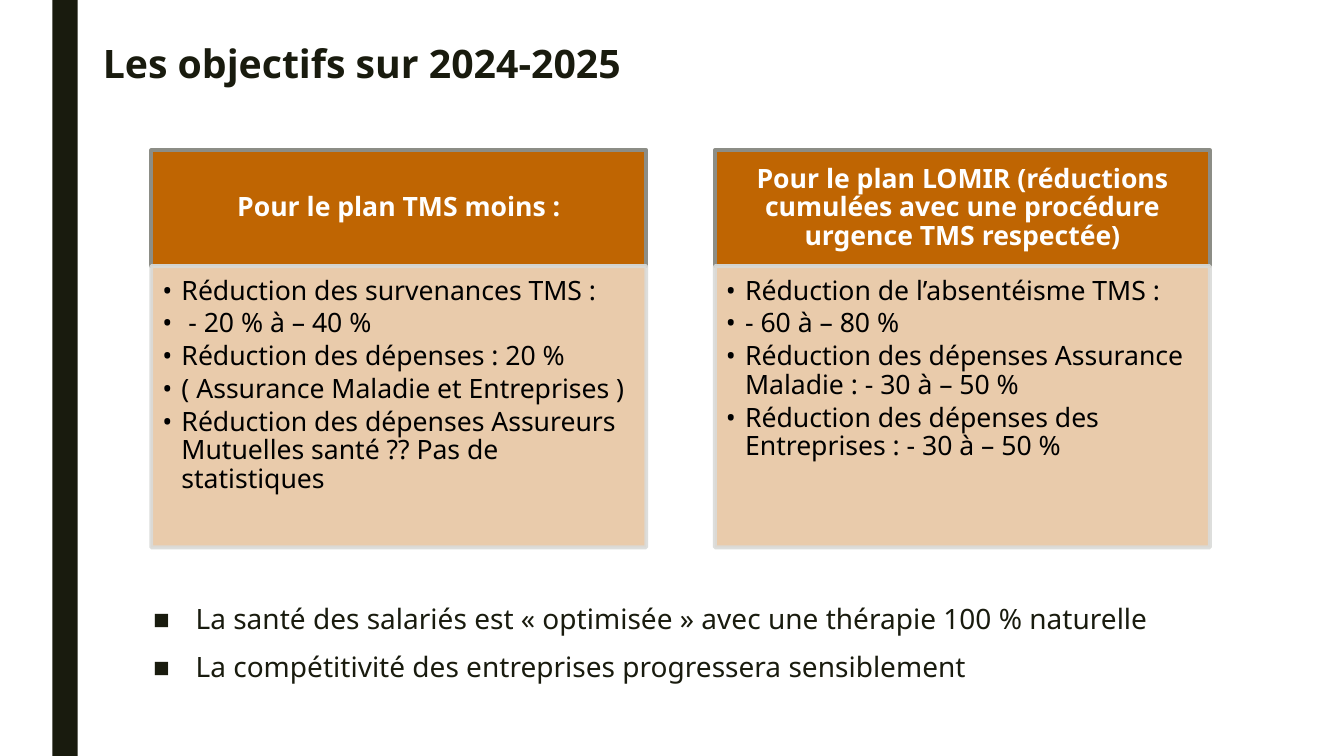
import pptx
import pptx.dml.color
import pptx.enum.shapes
import pptx.enum.text
import pptx.oxml.ns
import pptx.util
from lxml import etree

# Content
TITLE = "Les objectifs sur 2024-2025"
PLANS = [
    ("Pour le plan TMS moins :", [
        "Réduction des survenances TMS :",
        " - 20 % à – 40 %",
        "Réduction des dépenses : 20 %",
        "( Assurance Maladie et Entreprises )",
        "Réduction des dépenses Assureurs Mutuelles santé ?? Pas de statistiques",
    ]),
    ("Pour le plan LOMIR (réductions cumulées avec une procédure urgence TMS respectée)", [
        "Réduction de l’absentéisme TMS :",
        "- 60 à – 80 %",
        "Réduction des dépenses Assurance Maladie : - 30 à – 50 %",
        "Réduction des dépenses des Entreprises : - 30 à – 50 %",
    ]),
]
BENEFITS = [
    "La santé des salariés est « optimisée » avec une thérapie 100 % naturelle",
    "La compétitivité des entreprises progressera sensiblement",
]

# Style
FONT = "Noto Sans"
COLORS = {
    "ink": "191B0E", "header": "BF6502", "header_line": "8C8D86",
    "panel": "E7C6A2", "panel_line": "DADBD9", "white": "FFFFFF", "black": "000000",
}

# Grid, in inches
SLIDE_W, SLIDE_H = 13.33, 7.5
PLAN_LEFT, PLAN_TOP, PLAN_W, PLAN_GAP = 1.5, 1.49, 4.91, 0.68
HEADER_H, PANEL_H = 1.15, 2.79

ALIGN = pptx.enum.text.PP_ALIGN
ANCHOR = pptx.enum.text.MSO_ANCHOR
inches, points, qn = pptx.util.Inches, pptx.util.Pt, pptx.oxml.ns.qn


def rgb(name):
    return pptx.dml.color.RGBColor.from_string(COLORS[name])


def add_box(left, top, width, height, fill, line=None, opacity=100):
    box = slide.shapes.add_shape(
        pptx.enum.shapes.MSO_SHAPE.RECTANGLE, *map(inches, (left, top, width, height)))
    box.shadow.inherit = False
    box.fill.solid()
    box.fill.fore_color.rgb = rgb(fill)
    if line:
        box.line.color.rgb = rgb(line)
        box.line.width = points(2.75)
    else:
        box.line.fill.background()
    if opacity < 100:
        for color in box._element.spPr.iter(qn("a:srgbClr")):
            etree.SubElement(color, qn("a:alpha"), val=str(opacity * 1000))
    return box


def place(placeholder, left, top, width, height):
    placeholder.left, placeholder.top = inches(left), inches(top)
    placeholder.width, placeholder.height = inches(width), inches(height)


def write(shape, lines, size, color, spacing, before=0, after=0, bold=False,
          align=ALIGN.LEFT, anchor=ANCHOR.TOP, insets=(0.1, 0.05, 0.1, 0.05),
          bullet=None, bullet_percent=100, indent=0):
    frame = shape.text_frame
    frame.text = "\n".join(lines)
    frame.word_wrap = True
    frame.auto_size = pptx.enum.text.MSO_AUTO_SIZE.NONE
    frame.vertical_anchor = anchor
    (frame.margin_left, frame.margin_top,
     frame.margin_right, frame.margin_bottom) = map(inches, insets)
    for paragraph in frame.paragraphs:
        if bullet:
            props = paragraph._p.get_or_add_pPr()
            props.set("marL", str(inches(indent)))
            props.set("indent", str(-inches(indent)))
            etree.SubElement(props, qn("a:buSzPct"), val=str(bullet_percent * 1000))
            etree.SubElement(props, qn("a:buFont"), typeface=FONT)
            etree.SubElement(props, qn("a:buChar"), char=bullet)
        paragraph.alignment = align
        paragraph.line_spacing = spacing
        paragraph.space_before, paragraph.space_after = points(before), points(after)
        paragraph.font.name, paragraph.font.size = FONT, points(size)
        paragraph.font.bold = bold
        paragraph.font.color.rgb = rgb(color)


presentation = pptx.Presentation()
presentation.slide_width, presentation.slide_height = inches(SLIDE_W), inches(SLIDE_H)
slide = presentation.slides.add_slide(presentation.slide_layouts[1])

# Side band and title
add_box(0.52, 0, 0.25, SLIDE_H, "ink")
title = slide.shapes.title
place(title, 0.92, 0.4, 11.5, 0.82)
write(title, [TITLE], 28, "ink", 0.89, bold=True)

# One column per plan: header above its goals
for column, (plan, goals) in enumerate(PLANS):
    left = PLAN_LEFT + column * (PLAN_W + PLAN_GAP)
    header = add_box(left, PLAN_TOP, PLAN_W, HEADER_H, "header", "header_line")
    write(header, [plan], 19, "white", 0.9, bold=True, align=ALIGN.CENTER,
          anchor=ANCHOR.MIDDLE, insets=(0.15, 0.08, 0.15, 0.08))
    panel = add_box(left, PLAN_TOP + HEADER_H, PLAN_W, PANEL_H,
                    "panel", "panel_line", opacity=90)
    write(panel, goals, 19, "black", 0.9, after=2.85,
          insets=(0.11, 0.11, 0.15, 0.17), bullet="•", indent=0.19)

# Overall benefits
benefits = slide.placeholders[1]
place(benefits, 1.42, 5.94, 10.5, 1.06)
write(benefits, BENEFITS, 20, "ink", 0.94, before=10, after=2,
      bullet="■", bullet_percent=62, indent=0.42)

presentation.save("out.pptx")
